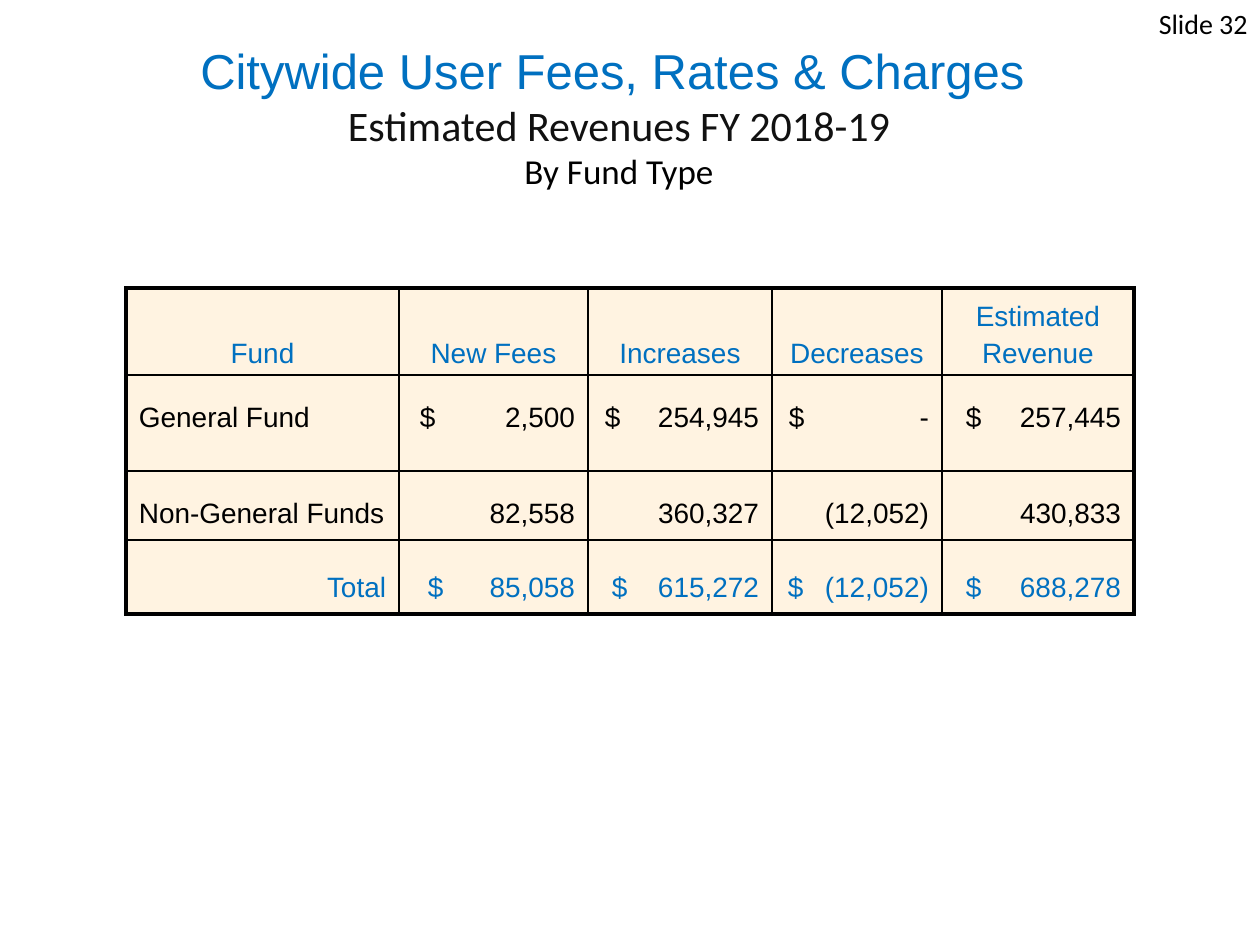
from lxml import etree
from pptx import Presentation
from pptx.dml.color import RGBColor
from pptx.enum import text
from pptx.oxml.ns import qn
from pptx.util import Emu, Pt

BLUE, BLACK, DARK, CREAM = "0070C0", "000000", "111111", "FFF3E1"
LEFT, CENTER, RIGHT = text.PP_ALIGN.LEFT, text.PP_ALIGN.CENTER, text.PP_ALIGN.RIGHT
TOP, MIDDLE, BOTTOM = (text.MSO_ANCHOR.TOP, text.MSO_ANCHOR.MIDDLE,
                       text.MSO_ANCHOR.BOTTOM)

TITLE = [
    [("Citywide User Fees, Rates & Charges ", 28, "Arial", BLUE),
     ("Estimated Revenues FY 2018-19", 24, "Calibri", DARK)],
    [("By Fund Type", 20, "Calibri", BLACK)],
]
SLIDE_LABEL = [[("Slide 32", 16, "Calibri", BLACK)]]

COLUMNS = [273, 189, 184, 170, 192]
ROWS = [
    dict(height=87, top=6, color=BLUE, cells=[
        "Fund", "New Fees", "Increases", "Decreases", "Estimated\nRevenue"]),
    dict(height=96, top=27, color=BLACK, dollar=[0, 21, 17, 17, 24], cells=[
        "General Fund", "$\t2,500", "$\t254,945", "$\t-", "$\t257,445"]),
    dict(height=69, top=27, color=BLACK, cells=[
        "Non-General Funds", "82,558", "360,327", "(12,052)", "430,833"]),
    dict(height=74, top=32, color=BLUE, dollar=[0, 29, 24, 16, 24], cells=[
        "Total", "$\t85,058", "$\t615,272", "$\t(12,052)", "$\t688,278"]),
]
PAD, THIN, THICK = 13, 1, 2.25


def px(n):
    return Emu(round(n * 914400 / 126))


def rgb(value):
    return RGBColor.from_string(value)


def apply(obj, **values):
    for name, value in values.items():
        setattr(obj, name, value)


def add_run(p, words, size, font, color):
    r = p.add_run()
    r.text = words
    apply(r.font, size=Pt(size), name=font)
    r.font.color.rgb = rgb(color)


def add_text(s, box, paragraphs, align, anchor):
    tf = s.shapes.add_textbox(*map(px, box)).text_frame
    apply(tf, word_wrap=True, vertical_anchor=anchor)
    for i, runs in enumerate(paragraphs):
        p = tf.add_paragraph() if i else tf.paragraphs[0]
        p.alignment = align
        for j, run in enumerate(runs):
            if j:
                p.add_line_break()
            add_run(p, *run)


def add_borders(cell, widths):
    tc_pr = cell._tc.get_or_add_tcPr()
    for side, width in widths.items():
        ln = etree.SubElement(tc_pr, qn("a:ln" + side), w=str(Pt(width)))
        fill = etree.SubElement(ln, qn("a:solidFill"))
        etree.SubElement(fill, qn("a:srgbClr"), val=BLACK)


def add_right_tab(p, position):
    tabs = etree.SubElement(p._p.get_or_add_pPr(), qn("a:tabLst"))
    etree.SubElement(tabs, qn("a:tab"), pos=str(px(position)), algn="r")


def fill_cell(cell, row, i, j):
    words, last_row, last_col = row["cells"][j], len(ROWS) - 1, len(COLUMNS) - 1
    has_tab = "\t" in words
    left = row["dollar"][j] if has_tab else PAD
    add_borders(cell, {
        "L": THIN if j else THICK, "R": THICK if j == last_col else THIN,
        "T": THIN if i else THICK, "B": THICK if i == last_row else THIN})
    cell.fill.solid()
    cell.fill.fore_color.rgb = rgb(CREAM)
    apply(cell, margin_left=px(left), margin_right=px(6 if has_tab else PAD),
          margin_top=px(row["top"]), margin_bottom=px(6),
          vertical_anchor=TOP if i else BOTTOM)
    if i == 0:
        align = CENTER
    elif has_tab or (j == 0 and i < last_row):
        align = LEFT
    else:
        align = RIGHT
    tf = cell.text_frame
    for k, line in enumerate(words.split("\n")):
        p = tf.add_paragraph() if k else tf.paragraphs[0]
        p.alignment = align
        if k:
            p.space_before = Pt(3.2)
        if has_tab:
            add_right_tab(p, COLUMNS[j] - PAD - left)
        add_run(p, line, 16, "Arial", row["color"])


def add_fund_table(s):
    height = sum(row["height"] for row in ROWS)
    table = s.shapes.add_table(len(ROWS), len(COLUMNS), px(126), px(288),
                               px(sum(COLUMNS)), px(height)).table
    apply(table, first_row=False, horz_banding=False)
    for column, width in zip(table.columns, COLUMNS):
        column.width = px(width)
    for i, row in enumerate(ROWS):
        table.rows[i].height = px(row["height"])
        for j in range(len(COLUMNS)):
            fill_cell(table.cell(i, j), row, i, j)


def main():
    prs = Presentation()
    apply(prs, slide_width=px(1260), slide_height=px(945))
    s = prs.slides.add_slide(prs.slide_layouts[6])
    add_text(s, (94, 53, 1050, 126), TITLE, CENTER, MIDDLE)
    add_fund_table(s)
    add_text(s, (966, 0, 294, 63), SLIDE_LABEL, RIGHT, TOP)
    prs.save("out.pptx")


if __name__ == "__main__":
    main()
